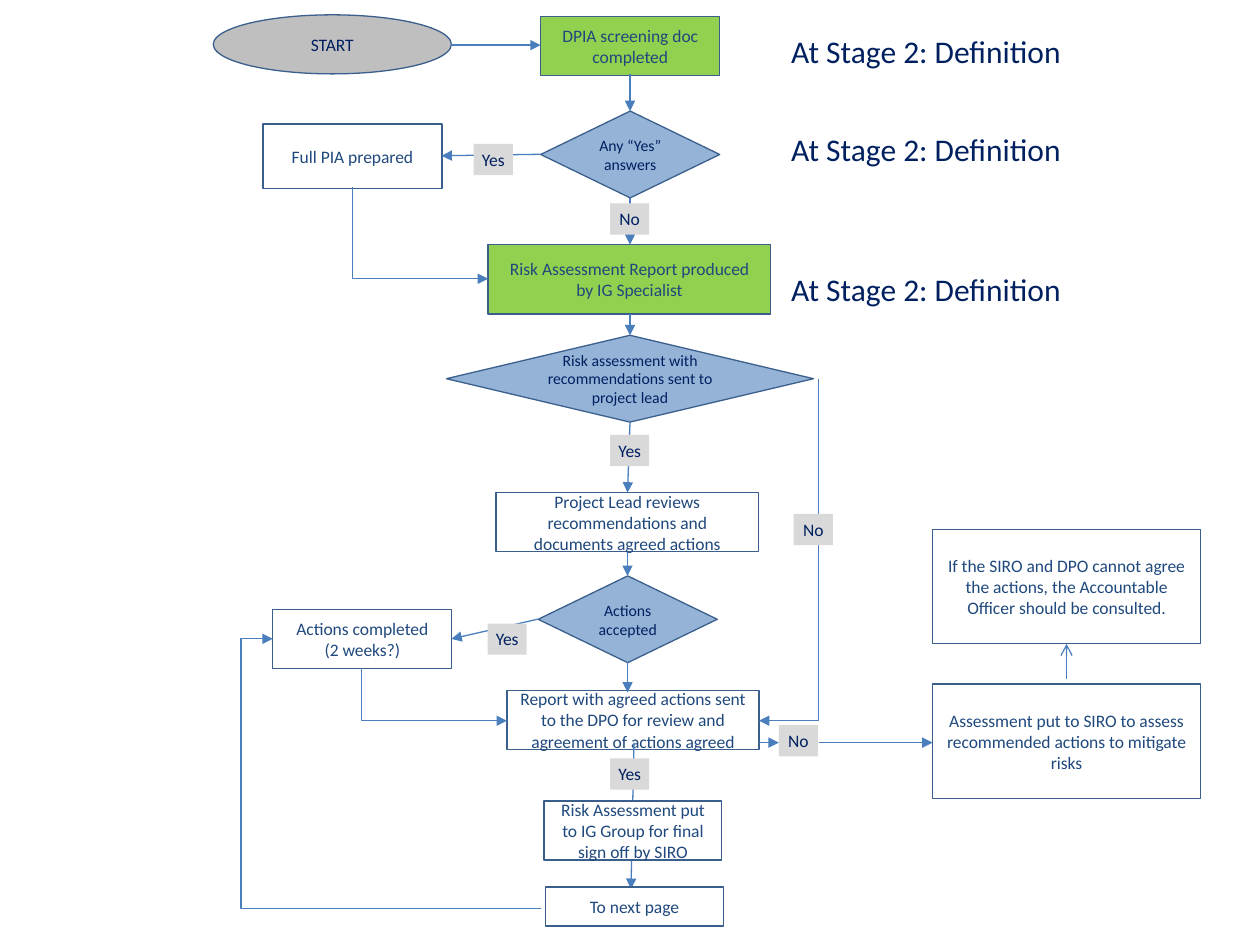
from typing import NamedTuple

from lxml import etree
from pptx import Presentation, util as u
from pptx.dml.color import RGBColor
from pptx.enum import shapes, text
from pptx.oxml import ns

RECT = shapes.MSO_SHAPE.RECTANGLE
DIAMOND = shapes.MSO_SHAPE.DIAMOND
OVAL = shapes.MSO_SHAPE.OVAL
STRAIGHT = shapes.MSO_CONNECTOR.STRAIGHT
ELBOW = shapes.MSO_CONNECTOR.ELBOW

NAVY, BLUE, OUTLINE, ARROW = "002060", "1F497D", "3A5F8C", "4B7EBC"
WHITE, GREEN, STEEL, GREY, PALE = "FFFFFF", "92D050", "95B3D7", "BFBFBF", "D9D9D9"


class Node(NamedTuple):
    words: str
    x: float
    y: float
    w: float
    h: float
    fill: str = WHITE
    kind: int = RECT
    color: str = BLUE


class Link(NamedTuple):
    x1: float
    y1: float
    x2: float
    y2: float
    head: str = "triangle"


class Label(NamedTuple):
    words: str
    x: float
    y: float


STEPS = [
    Node("DPIA screening doc completed", 10.9, 0.33, 3.61, 1.19, GREEN),
    Node("Full PIA prepared", 5.3, 2.5, 3.61, 1.3),
    Node("Risk assessment with recommendations sent to project lead",
         9, 6.76, 7.4, 1.75, STEEL, DIAMOND, NAVY),
    Node("Risk Assessment Report produced by IG Specialist", 9.84, 4.93, 5.7, 1.4, GREEN),
    Node("Report with agreed actions sent to the DPO for review and agreement of actions agreed",
         10.22, 13.92, 5.08, 1.19),
    Node("Any “Yes” answers", 10.9, 2.24, 3.61, 1.75, STEEL, DIAMOND, NAVY),
    Node("Project Lead reviews recommendations and documents agreed actions",
         10, 9.93, 5.29, 1.19),
    Node("Actions accepted", 10.85, 11.61, 3.61, 1.75, STEEL, DIAMOND, NAVY),
    Node("Actions completed\n(2 weeks?)", 5.5, 12.29, 3.61, 1.19),
    Node("START", 4.3, 0.3, 4.8, 1.19, GREY, OVAL, NAVY),
]
FINAL_STEPS = [
    Node("Risk Assessment put to IG Group for final sign off by SIRO", 10.97, 16.15, 3.58, 1.19),
    Node("Assessment put to SIRO to assess recommended actions to mitigate risks",
         18.8, 13.79, 5.4, 2.31),
    Node("To next page", 11, 17.88, 3.58, 0.79),
    Node("If the SIRO and DPO cannot agree the actions, the Accountable Officer "
         "should be consulted.", 18.8, 10.67, 5.4, 2.31),
]
STRAIGHTS = [
    Link(12.7, 1.5, 12.7, 2.24),
    Link(12.7, 3.99, 12.7, 4.93),
    Link(10.9, 3.11, 8.9, 3.14),
    Link(12.7, 6.33, 12.7, 6.76),
    Link(12.7, 8.51, 12.65, 9.93),
    Link(12.65, 11.13, 12.65, 11.61),
    Link(10.85, 12.48, 9.1, 12.88),
    Link(12.65, 13.35, 12.65, 13.96),
    Link(12.78, 14.97, 12.72, 17.92),
    Link(9.1, 0.91, 10.9, 0.91),
    Link(15.3, 14.97, 15.7, 14.97),
    Link(16.5, 14.97, 18.8, 14.97),
    Link(21.5, 13.69, 21.5, 12.98, "arrow"),
]
CORNERS = [
    Link(7.11, 3.78, 9.84, 5.62),
    Link(16.5, 7.64, 15.3, 14.53),
    Link(7.29, 13.47, 10.22, 14.53),
]
RETURN_LOOP = Link(10.9, 18.31, 5.5, 12.88)
LABELS = [
    Label("Yes", 9.55, 2.9), Label("Yes", 12.3, 8.77), Label("Yes", 9.83, 12.57),
    Label("Yes", 12.3, 15.29), Label("No", 12.3, 4.1), Label("No", 16, 10.36),
    Label("No", 15.7, 14.62),
]
HEADING_TOPS = [0.53, 2.49, 5.31]


def rgb(value: str) -> RGBColor:
    return RGBColor.from_string(value)


def write(tf, words: str, size: float, color: str, align, anchor, inset=None) -> None:
    tf.text = words
    tf.word_wrap = True
    tf.vertical_anchor = anchor
    if inset is not None:
        tf.margin_left = tf.margin_right = tf.margin_top = tf.margin_bottom = u.Cm(inset)
    for p in tf.paragraphs:
        p.alignment = align
        for r in p.runs:
            r.font.name = "Calibri"
            r.font.size = u.Pt(size)
            r.font.color.rgb = rgb(color)


def add_block(s, kind: int, x: float, y: float, w: float, h: float, fill: str):
    sp = s.shapes.add_shape(kind, u.Cm(x), u.Cm(y), u.Cm(w), u.Cm(h))
    sp.shadow.inherit = False
    sp.fill.solid()
    sp.fill.fore_color.rgb = rgb(fill)
    return sp


def draw_node(s, n: Node) -> None:
    sp = add_block(s, n.kind, n.x, n.y, n.w, n.h, n.fill)
    sp.line.color.rgb = rgb(OUTLINE)
    sp.line.width = u.Pt(0.75)
    size, inset = (9, 0) if n.kind == DIAMOND else (10, None)
    write(sp.text_frame, n.words, size, n.color,
          text.PP_ALIGN.CENTER, text.MSO_ANCHOR.MIDDLE, inset)


def draw_label(s, label: Label) -> None:
    sp = add_block(s, RECT, label.x, label.y, 0.79, 0.63, PALE)
    sp.line.fill.background()
    write(sp.text_frame, label.words, 10, NAVY,
          text.PP_ALIGN.CENTER, text.MSO_ANCHOR.TOP, 0.1)
    sp.text_frame.auto_size = text.MSO_AUTO_SIZE.SHAPE_TO_FIT_TEXT


def draw_heading(s, top: float) -> None:
    tf = s.shapes.add_textbox(u.Cm(15.7), u.Cm(top), u.Cm(6.02), u.Cm(1.02)).text_frame
    write(tf, "At Stage 2: Definition", 18, NAVY, text.PP_ALIGN.LEFT, text.MSO_ANCHOR.TOP)
    tf.auto_size = text.MSO_AUTO_SIZE.SHAPE_TO_FIT_TEXT


def draw_link(s, k: Link, kind: int = STRAIGHT):
    cn = s.shapes.add_connector(kind, u.Cm(k.x1), u.Cm(k.y1), u.Cm(k.x2), u.Cm(k.y2))
    cn.line.color.rgb = rgb(ARROW)
    cn.line.width = u.Pt(0.75)
    etree.SubElement(cn.line._get_or_add_ln(), ns.qn("a:tailEnd"), type=k.head)
    spPr = cn._element.spPr
    etree.SubElement(spPr, ns.qn("a:effectLst"))
    return spPr


def draw_corner(s, k: Link) -> None:
    cx, cy = (k.x1 + k.x2) / 2, (k.y1 + k.y2) / 2
    half_w, half_h = (k.y2 - k.y1) / 2, abs(k.x2 - k.x1) / 2
    rightward = k.x2 > k.x1
    side = half_w if rightward else -half_w
    spPr = draw_link(s, Link(cx + side, cy - half_h, cx - side, cy + half_h), ELBOW)
    spPr.find(ns.qn("a:xfrm")).set("rot", str((270 if rightward else 90) * 60000))
    spPr.find(ns.qn("a:prstGeom")).set("prst", "bentConnector2")


def draw_loop(s, k: Link) -> None:
    geom = draw_link(s, k, ELBOW).find(ns.qn("a:prstGeom"))
    guides = geom.find(ns.qn("a:avLst"))
    etree.SubElement(guides, ns.qn("a:gd"), name="adj1", fmla="val 111800")


def main() -> None:
    prs = Presentation()
    prs.slide_width, prs.slide_height = u.Cm(25.4), u.Cm(19.05)
    s = prs.slides.add_slide(prs.slide_layouts[6])
    for n in STEPS:
        draw_node(s, n)
    for k in STRAIGHTS:
        draw_link(s, k)
    for k in CORNERS:
        draw_corner(s, k)
    draw_loop(s, RETURN_LOOP)
    for label in LABELS:
        draw_label(s, label)
    for top in HEADING_TOPS:
        draw_heading(s, top)
    for n in FINAL_STEPS:
        draw_node(s, n)
    prs.save("out.pptx")


if __name__ == "__main__":
    main()
